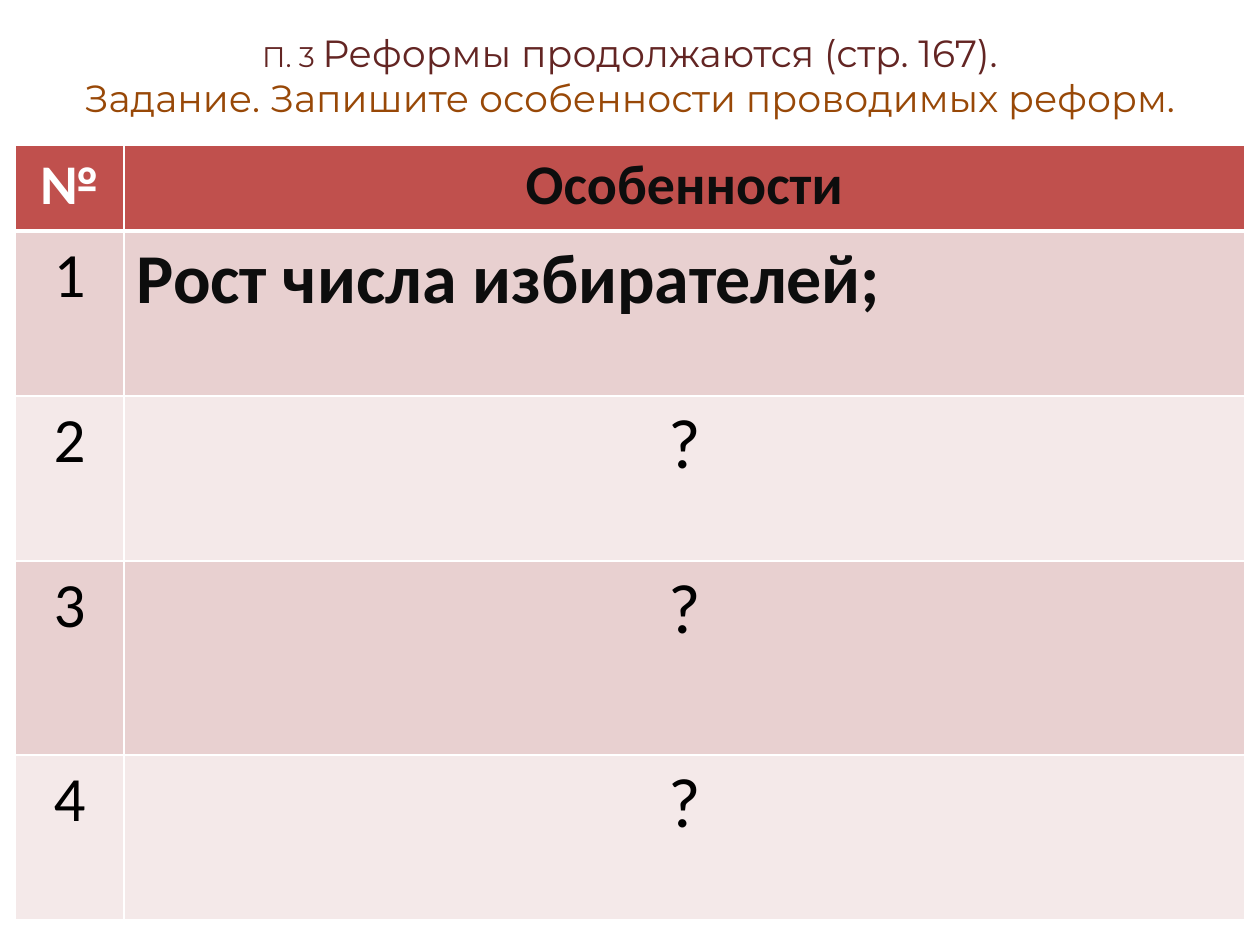
"""Build a slide with a title and a table of reform features."""
import pptx
import pptx.dml.color
import pptx.enum.text
import pptx.oxml
import pptx.oxml.ns
import pptx.util

ALIGN = pptx.enum.text.PP_ALIGN
THEME = {
    "head": "C0504D", "odd": "E8D0D0", "even": "F4E9E9", "line": "FFFFFF",
    "white": "FFFFFF", "dark": "0D0D0D", "black": "000000",
    "wine": "632523", "brown": "984807",
    "tiny": 16.2, "title": 21.6, "label": 32, "num": 36, "body": 40,
    "serif": "Montserrat", "sans": "Calibri",
}
TITLE = [
    [("П. 3 ", "tiny", "wine"),
     ("Реформы продолжаются (стр. 167).", "title", "wine")],
    [("Задание. Запишите особенности проводимых реформ.", "title", "brown")],
]
HEAD = ("№", "Особенности")
ITEMS = ["Рост числа избирателей;", "?", "?", "?"]
COLS = [109, 1121]
ROWS = [86, 165, 165, 194, 165]


def px(count):
    return pptx.util.Emu(round(count * 914400 / 126))


def write(par, text, size="body", color="black", font="sans", bold=False,
          align=ALIGN.CENTER):
    par.alignment = align
    run = par.add_run()
    run.text = text
    run.font.size = pptx.util.Pt(THEME[size])
    run.font.name = THEME[font]
    run.font.bold = bold
    run.font.color.rgb = pptx.dml.color.RGBColor.from_string(THEME[color])


def edge(cell, side, width):
    space = pptx.oxml.ns.nsdecls("a")
    xml = (f'<a:ln{side} {space} w="{pptx.util.Pt(width)}"><a:solidFill>'
           f'<a:srgbClr val="{THEME["line"]}"/></a:solidFill></a:ln{side}>')
    cell._tc.get_or_add_tcPr().append(pptx.oxml.parse_xml(xml))


def paint(cell, row):
    thick = {"T": 3 if row == 1 else 1, "B": 3 if row == 0 else 1}
    for side in "LRTB":
        edge(cell, side, thick.get(side, 1))
    name = "head" if row == 0 else "odd" if row % 2 else "even"
    cell.fill.solid()
    cell.fill.fore_color.rgb = pptx.dml.color.RGBColor.from_string(THEME[name])


def add_title(slide):
    frame = slide.shapes.add_textbox(px(0), px(26), px(1260), px(139)).text_frame
    frame.word_wrap = True
    frame.vertical_anchor = pptx.enum.text.MSO_ANCHOR.MIDDLE
    frame.margin_bottom = px(47)
    par = frame.paragraphs[0]
    for place, line in enumerate(TITLE):
        if place:
            par.add_line_break()
        for text, size, color in line:
            write(par, text, size=size, color=color, font="serif")


def add_grid(slide):
    grid = slide.shapes.add_table(len(ROWS), len(COLS), px(15), px(145),
                                  px(sum(COLS)), px(sum(ROWS))).table
    for col, width in zip(grid.columns, COLS):
        col.width = px(width)
    for row, height in zip(grid.rows, ROWS):
        row.height = px(height)
    for row in range(len(ROWS)):
        left, right = (grid.cell(row, col) for col in range(2))
        paint(left, row)
        paint(right, row)
        num, item = (cell.text_frame.paragraphs[0] for cell in (left, right))
        if row == 0:
            write(num, HEAD[0], size="label", color="white", bold=True)
            write(item, HEAD[1], size="label", color="dark", bold=True)
            continue
        text = ITEMS[row - 1]
        known = text != "?"
        write(num, str(row), size="num")
        write(item, text, color="dark" if known else "black", bold=known,
              align=ALIGN.LEFT if known else ALIGN.CENTER)


def main():
    deck = pptx.Presentation()
    deck.slide_width, deck.slide_height = px(1260), px(945)
    slide = deck.slides.add_slide(deck.slide_layouts[6])
    add_title(slide)
    add_grid(slide)
    deck.save("out.pptx")


if __name__ == "__main__":
    main()
